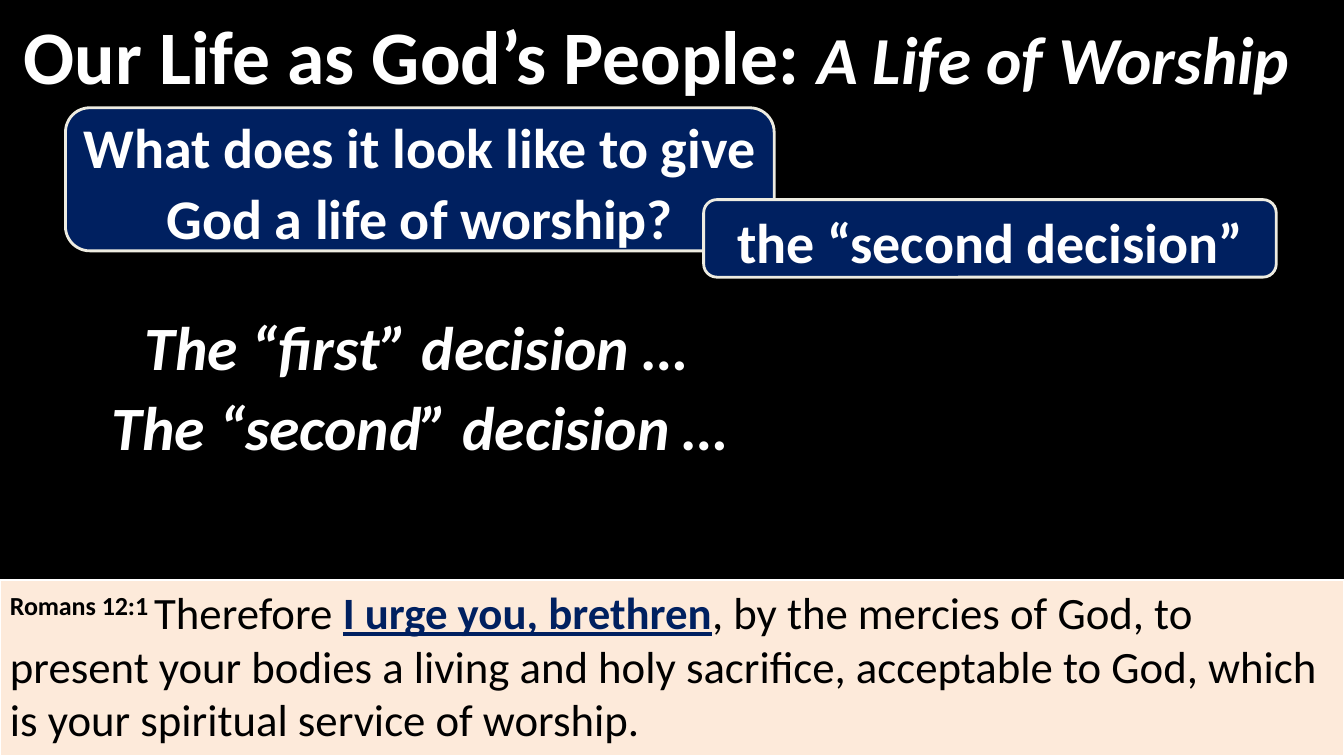
from lxml import etree
from pptx import Presentation
from pptx.dml.color import RGBColor
from pptx.enum.shapes import MSO_SHAPE
from pptx.enum.text import MSO_ANCHOR, PP_ALIGN
from pptx.oxml.ns import qn
from pptx.util import Pt

RECTANGLE = MSO_SHAPE.RECTANGLE
CALLOUT = MSO_SHAPE.ROUNDED_RECTANGULAR_CALLOUT
TOP, MIDDLE = MSO_ANCHOR.TOP, MSO_ANCHOR.MIDDLE
LEFT, CENTER = PP_ALIGN.LEFT, PP_ALIGN.CENTER

FONT = "Calibri"
SLIDE_WIDTH, SLIDE_HEIGHT = 960, 540
CALLOUT_ADJUSTMENTS = (-0.22, 0.5, 0.17)
COLORS = {
    "black": "000000",
    "white": "FFFFFF",
    "navy": "002060",
    "cream": "EEECE1",
    "peach": "FDEADA",
}


def rgb(name):
    return RGBColor.from_string(COLORS[name])


def add_text(paragraph, text, size=40, color="white", bold=False,
             italic=False, underline=False, baseline=0):
    run = paragraph.add_run()
    run.text = text
    font = run.font
    font.name, font.size = FONT, Pt(size)
    font.bold, font.italic, font.underline = bold, italic, underline
    font.color.rgb = rgb(color)
    if baseline:
        run._r.get_or_add_rPr().set("baseline", str(baseline * 1000))


def add_panel(slide, kind, left, top, width, height, fill=None, opacity=100,
              line=None, line_width=2, anchor=MIDDLE, align=LEFT):
    panel = slide.shapes.add_shape(kind, Pt(left), Pt(top), Pt(width), Pt(height))
    panel.shadow.inherit = False
    if fill:
        panel.fill.solid()
        panel.fill.fore_color.rgb = rgb(fill)
        if opacity < 100:
            fill_color = panel._element.spPr.find(qn("a:solidFill"))[0]
            etree.SubElement(fill_color, qn("a:alpha")).set("val", str(opacity * 1000))
    else:
        panel.fill.background()
    if line:
        panel.line.color.rgb = rgb(line)
        panel.line.width = Pt(line_width)
    else:
        panel.line.fill.background()
    frame = panel.text_frame
    frame.word_wrap = True
    frame.vertical_anchor = anchor
    frame.paragraphs[0].alignment = align
    return panel


def add_callout(slide, text, left, top, width, height, size=40, italic=False,
                fill=None, line=None):
    callout = add_panel(slide, CALLOUT, left, top, width, height,
                        fill=fill, line=line, align=CENTER)
    for index, value in enumerate(CALLOUT_ADJUSTMENTS):
        callout.adjustments[index] = value
    paragraph = callout.text_frame.paragraphs[0]
    paragraph.line_spacing = 1.07
    add_text(paragraph, text, size=size, bold=True, italic=italic)


def add_title(slide):
    banner = add_panel(slide, RECTANGLE, 0, 0, SLIDE_WIDTH, 77,
                       fill="black", opacity=64)
    banner.text_frame.margin_left = Pt(17)
    title = banner.text_frame.paragraphs[0]
    add_text(title, "Our Life as God’s People: ", size=54, bold=True)
    add_text(title, "A Life of Worship", size=48, bold=True, italic=True)


def add_verse(slide):
    top = 414
    panel = add_panel(slide, RECTANGLE, 0, top, SLIDE_WIDTH, SLIDE_HEIGHT - top,
                      fill="peach", line="white", line_width=1.5, anchor=TOP)
    verse = panel.text_frame.paragraphs[0]
    add_text(verse, "Romans 12:1 ", size=32, color="black", bold=True, baseline=30)
    add_text(verse, "Therefore ", size=32, color="black")
    add_text(verse, "I urge you, brethren", size=32, color="navy",
             bold=True, underline=True)
    add_text(verse, ", by the mercies of God, to present your bodies a living "
             "and holy sacrifice, acceptable to God, which is your spiritual "
             "service of worship.", size=32, color="black")


def main():
    deck = Presentation()
    deck.slide_width, deck.slide_height = Pt(SLIDE_WIDTH), Pt(SLIDE_HEIGHT)
    slide = deck.slides.add_slide(deck.slide_layouts[6])
    slide.background.fill.solid()
    slide.background.fill.fore_color.rgb = rgb("black")

    add_title(slide)
    boxed = {"fill": "navy", "line": "cream"}
    add_callout(slide, "What does it look like to give God a life of worship?",
                46.8, 77, 506.2, 102.2, **boxed)
    add_verse(slide)
    add_callout(slide, "the “second decision”", 502.6, 142.6, 409, 55.4, **boxed)
    add_callout(slide, "The “first” decision …", 92.9, 217.4, 409, 55.4,
                size=44, italic=True)
    add_callout(slide, "The “second” decision …", 61.2, 275, 478, 55.4,
                size=44, italic=True)
    deck.save("out.pptx")


if __name__ == "__main__":
    main()
